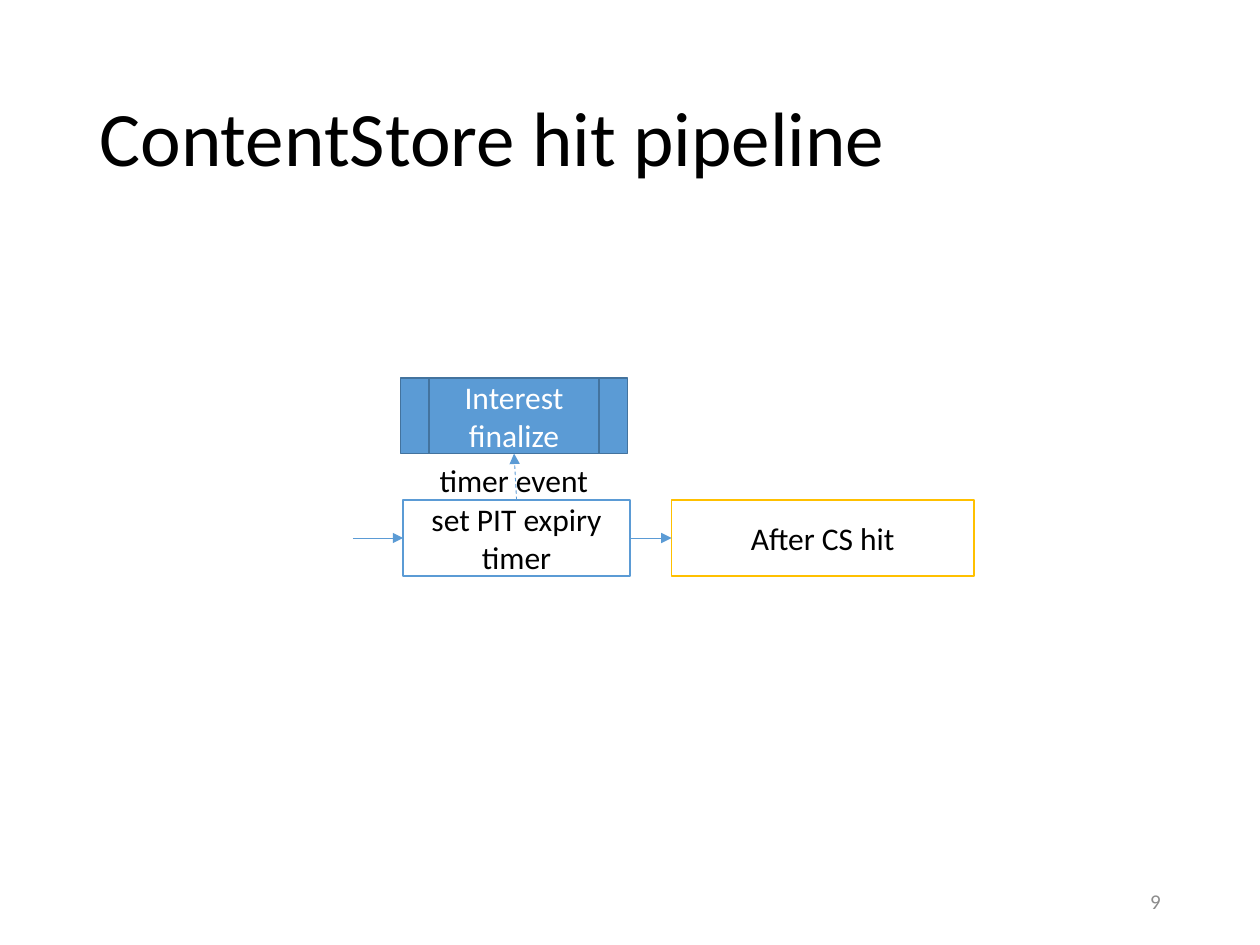
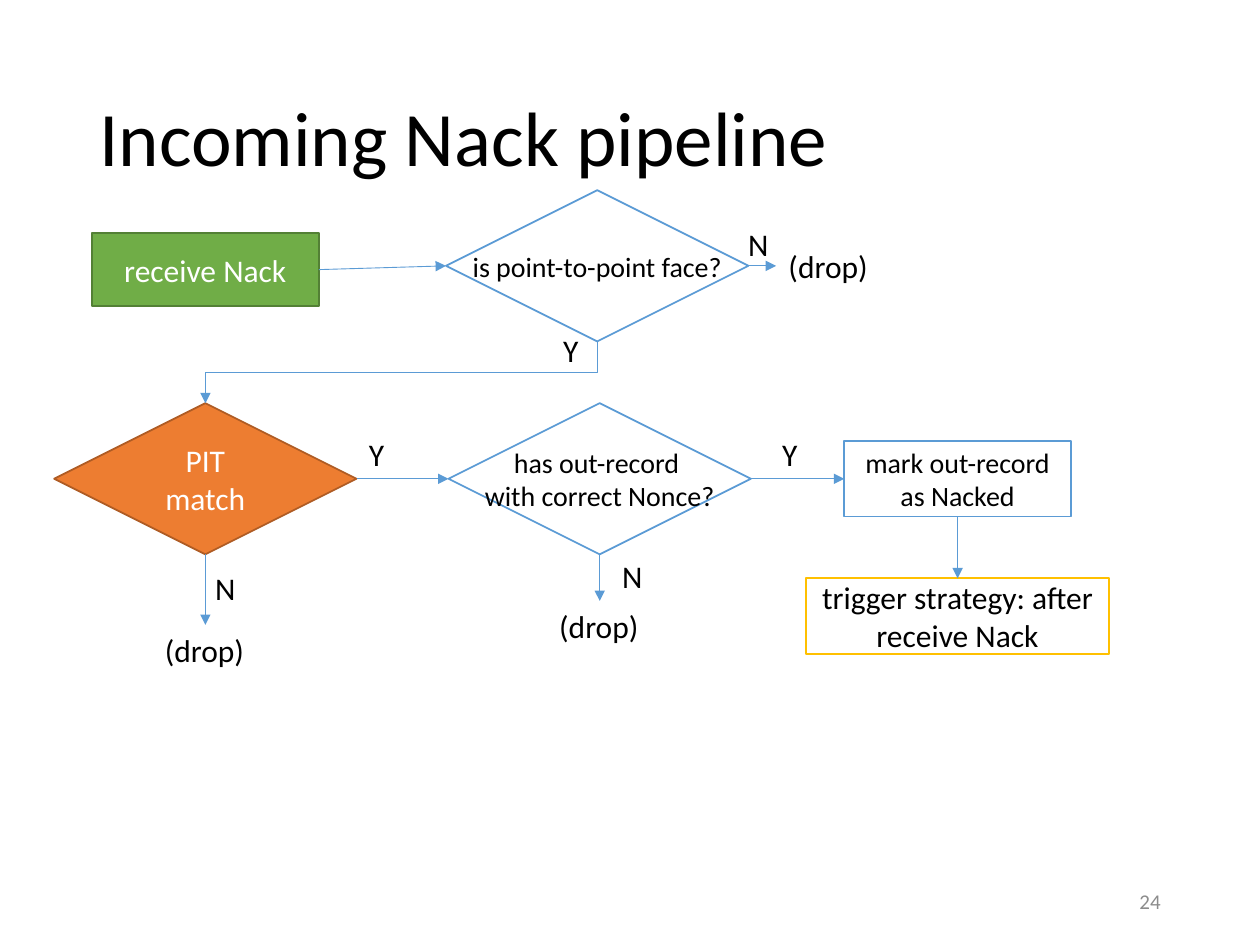
from lxml import etree
from pptx import Presentation
from pptx.dml.color import RGBColor
from pptx.enum import dml, shapes, text
from pptx.oxml import ns
from pptx.util import Inches, Pt

FONT = "Calibri"
BLACK, WHITE, GREY = "000000", "FFFFFF", "8C8C8C"
BLUE, DARK_BLUE, GOLD = "5B9BD5", "43739E", "FFC000"
GREEN, DARK_GREEN = "70AD47", "538035"
ORANGE, DARK_ORANGE = "ED7D31", "AF5C24"
RECT = shapes.MSO_SHAPE.RECTANGLE
DECISION = shapes.MSO_SHAPE.FLOWCHART_DECISION
PIPELINE = shapes.MSO_SHAPE.FLOWCHART_PREDEFINED_PROCESS
TOP, LEFT, BOTTOM, RIGHT = range(4)
STEP_SIZE = (1.8, 0.6)
STRATEGY_SIZE = (2.4, 0.6)
DECISION_SIZE = (2.4, 1.2)


def color(hex_code):
    return RGBColor.from_string(hex_code)


def write(frame, wording, size=18, ink=BLACK, align=text.PP_ALIGN.LEFT,
          anchor=text.MSO_ANCHOR.MIDDLE, wrap=True):
    frame.word_wrap = wrap
    frame.vertical_anchor = anchor
    paragraph = frame.paragraphs[0]
    paragraph.alignment = align
    for index, line in enumerate(wording.split("\n")):
        if index:
            paragraph.add_line_break()
        run = paragraph.add_run()
        run.text = line
        run.font.name = FONT
        run.font.size = Pt(size)
        run.font.color.rgb = color(ink)
    return paragraph


def add_page(deck, heading, number):
    slide = deck.slides.add_slide(deck.slide_layouts[5])
    title = slide.shapes.title
    title.left, title.top = Inches(0.69), Inches(0.4)
    title.width, title.height = Inches(8.62), Inches(1.45)
    title.text_frame.auto_size = text.MSO_AUTO_SIZE.NONE
    write(title.text_frame, heading, 44).line_spacing = 0.9
    footer = slide.shapes.add_textbox(
        Inches(7.06), Inches(6.95), Inches(2.25), Inches(0.4))
    write(footer.text_frame, number, 12, GREY, text.PP_ALIGN.RIGHT)
    return slide


def add_node(slide, kind, left, top, size, wording, outline=BLUE,
             fill=WHITE, ink=BLACK, points=18, wrap=True):
    node = slide.shapes.add_shape(
        kind, Inches(left), Inches(top), *map(Inches, size))
    node.shadow.inherit = False
    node.fill.solid()
    node.fill.fore_color.rgb = color(fill)
    node.line.color.rgb = color(outline)
    node.line.width = Pt(1)
    write(node.text_frame, wording, points, ink, text.PP_ALIGN.CENTER, wrap=wrap)
    return node


def add_label(slide, left, top, width, wording):
    label = slide.shapes.add_textbox(
        Inches(left), Inches(top), Inches(width), Inches(0.4))
    write(label.text_frame, wording, anchor=text.MSO_ANCHOR.TOP, wrap=False)
    label.text_frame.auto_size = text.MSO_AUTO_SIZE.SHAPE_TO_FIT_TEXT
    return label


def add_yes(slide, left, top):
    add_label(slide, left, top, 0.32, "Y")


def add_no(slide, left, top):
    add_label(slide, left, top, 0.36, "N")


def add_drop(slide, left, top):
    return add_label(slide, left, top, 0.84, "(drop)")


def add_arrow(slide, begin=(0, 0), end=(0, 0), kind=shapes.MSO_CONNECTOR.STRAIGHT):
    arrow = slide.shapes.add_connector(kind, *map(Inches, (*begin, *end)))
    arrow.line.color.rgb = color(BLUE)
    arrow.line.width = Pt(0.5)
    etree.SubElement(arrow.line._get_or_add_ln(), ns.qn("a:tailEnd"), type="triangle")
    etree.SubElement(arrow._element.spPr, ns.qn("a:effectLst"))
    return arrow


def link(slide, source, source_side, target, target_side):
    arrow = add_arrow(slide)
    arrow.begin_connect(source, source_side)
    arrow.end_connect(target, target_side)
    return arrow


def link_down_left(slide, begin, end):
    run, drop = begin[0] - end[0], end[1] - begin[1]
    center_x, center_y = (begin[0] + end[0]) / 2, (begin[1] + end[1]) / 2
    left, top = center_x - drop / 2, center_y - run / 2
    arrow = add_arrow(slide, (left, top), (left + drop, top + run),
                      shapes.MSO_CONNECTOR.ELBOW)
    arrow._element.spPr.get_or_add_xfrm().set("rot", "5400000")


def build_content_store_hit(deck):
    slide = add_page(deck, "ContentStore hit pipeline", "9")
    set_timer = add_node(slide, RECT, 3.2, 3.97, STEP_SIZE, "set PIT expiry timer")
    finalize = add_node(slide, PIPELINE, 3.18, 3, STEP_SIZE, "Interest finalize",
                        DARK_BLUE, BLUE, WHITE)
    after_hit = add_node(slide, RECT, 5.33, 3.97, STRATEGY_SIZE, "After CS hit", GOLD)
    timer_event = link(slide, set_timer, TOP, finalize, BOTTOM)
    timer_event.line.dash_style = dml.MSO_LINE.DASH
    add_label(slide, 3.39, 3.61, 1.4, "timer event")
    add_arrow(slide, (2.8, 4.27), (3.2, 4.27))
    link(slide, set_timer, RIGHT, after_hit, LEFT)


def build_incoming_nack(deck):
    slide = add_page(deck, "Incoming Nack pipeline", "24")
    receive = add_node(slide, RECT, 0.73, 1.85, (1.8, 0.58), "receive Nack",
                       DARK_GREEN, GREEN, WHITE)
    point_to_point = add_node(slide, DECISION, 3.54, 1.51, DECISION_SIZE,
                              "is point-to-point face?", points=16, wrap=False)
    pit_match = add_node(slide, DECISION, 0.43, 3.2, DECISION_SIZE, "PIT match",
                         DARK_ORANGE, ORANGE, WHITE)
    out_record = add_node(slide, DECISION, 3.56, 3.2, DECISION_SIZE,
                          "has out-record \nwith correct Nonce?", points=16, wrap=False)
    mark = add_node(slide, RECT, 6.7, 3.5, STEP_SIZE, "mark out-record as Nacked",
                    points=16)
    trigger = add_node(slide, RECT, 6.4, 4.59, STRATEGY_SIZE,
                       "trigger strategy: after receive Nack", GOLD)

    link(slide, receive, RIGHT, point_to_point, LEFT)
    link_down_left(slide, (4.74, 2.71), (1.63, 3.2))
    link(slide, pit_match, RIGHT, out_record, LEFT)
    link(slide, out_record, RIGHT, mark, LEFT)
    link(slide, mark, BOTTOM, trigger, TOP)
    link(slide, point_to_point, RIGHT, add_drop(slide, 6.16, 1.91), LEFT)
    link(slide, pit_match, BOTTOM, add_drop(slide, 1.21, 4.96), TOP)
    link(slide, out_record, BOTTOM, add_drop(slide, 4.34, 4.77), TOP)

    for left, top in ((4.37, 2.58), (2.83, 3.4), (6.11, 3.4)):
        add_yes(slide, left, top)
    for left, top in ((5.84, 1.74), (1.61, 4.47), (4.84, 4.37)):
        add_no(slide, left, top)


def main():
    deck = Presentation()
    deck.slide_width, deck.slide_height = Inches(10), Inches(7.5)
    build_content_store_hit(deck)
    build_incoming_nack(deck)
    deck.save("out.pptx")


if __name__ == "__main__":
    main()
